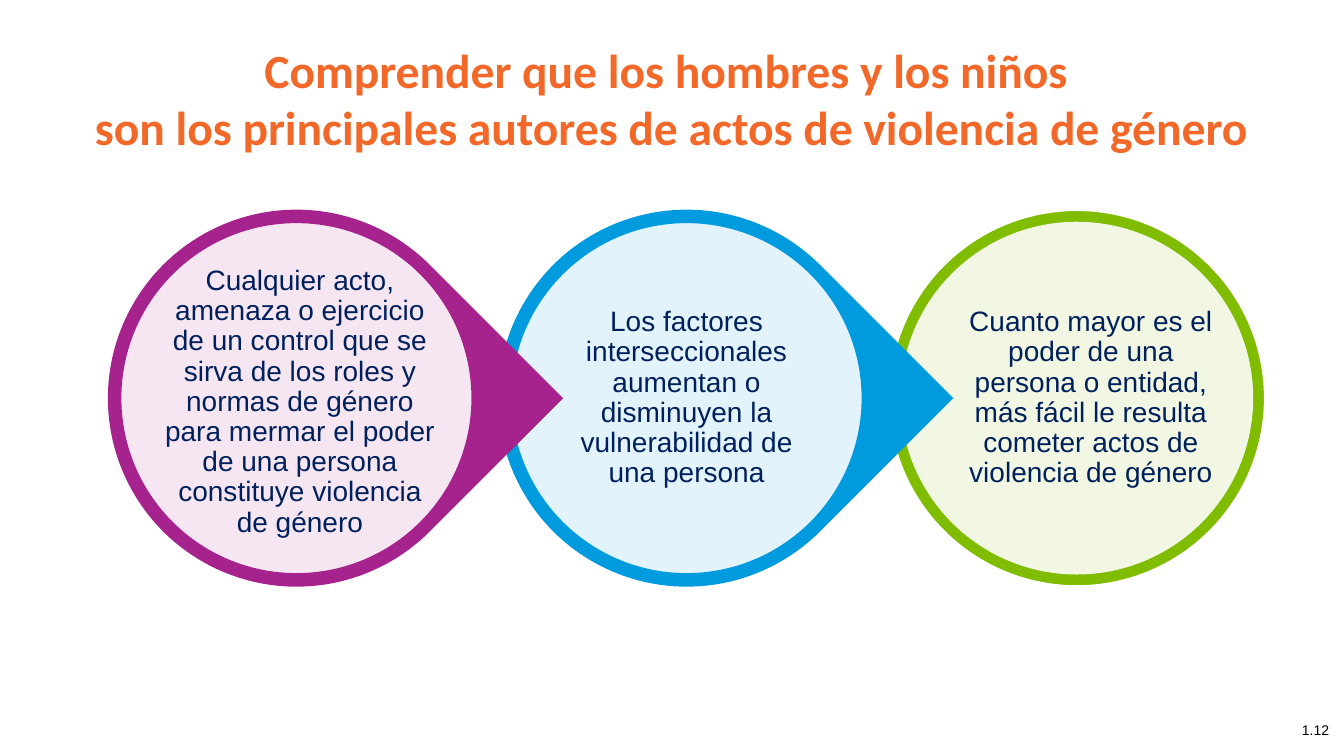
from lxml.etree import SubElement
from pptx import Presentation
from pptx.dml.color import RGBColor
from pptx.enum.shapes import MSO_SHAPE
from pptx.enum.text import MSO_ANCHOR, PP_ALIGN
from pptx.oxml.ns import qn
from pptx.util import Inches, Pt

NAVY, ORANGE, WHITE, BLACK = "00205C", "F26829", "FFFFFF", "000000"
STEP = 3.87

STAGES = [
    {"color": "A6228C", "outline": MSO_SHAPE.TEAR, "text_box": (1.58, 2.74, 2.79, 2.5),
     "text": "Cualquier acto, amenaza o ejercicio de un control que se sirva de los roles y normas "
             "de género para mermar el poder de una persona constituye violencia de género"},
    {"color": "009ADE", "outline": MSO_SHAPE.TEAR, "text_box": (5.56, 2.7, 2.5, 2.5),
     "text": "Los factores interseccionales aumentan o disminuyen la vulnerabilidad de una persona"},
    {"color": "80BC00", "outline": MSO_SHAPE.OVAL, "text_box": (9.57, 2.7, 2.5, 2.5),
     "text": "Cuanto mayor es el poder de una persona o entidad, más fácil le resulta cometer "
             "actos de violencia de género"},
]


def rgb(value):
    return RGBColor.from_string(value)


def set_attributes(target, values):
    for name, value in values.items():
        setattr(target, name, value)


class SlideBuilder:
    body = {"name": "Arial", "size": Pt(20)}
    title = {"name": "Calibri", "size": Pt(34), "bold": True}
    number = {"name": "Arial", "size": Pt(10)}

    def __init__(self, slide):
        self.slide = slide

    def shape(self, kind, box, fill, line=None, opacity=None, rotation=0):
        shape = self.slide.shapes.add_shape(kind, *map(Inches, box))
        shape.shadow.inherit = False
        shape.rotation = rotation
        shape.fill.solid()
        shape.fill.fore_color.rgb = rgb(fill)
        if opacity is not None:
            color = shape.fill._xPr.find(qn("a:solidFill"))[0]
            SubElement(color, qn("a:alpha"), val=str(opacity * 1000))
        if line:
            shape.line.color.rgb = rgb(line)
            shape.line.width = Pt(2)
        else:
            shape.line.fill.background()
        return shape

    def text(self, box, text, font, color, margins, paragraph_format, anchor=MSO_ANCHOR.TOP):
        frame = self.slide.shapes.add_textbox(*map(Inches, box)).text_frame
        horizontal, vertical = map(Inches, margins)
        set_attributes(frame, {
            "word_wrap": True, "vertical_anchor": anchor,
            "margin_left": horizontal, "margin_right": horizontal,
            "margin_top": vertical, "margin_bottom": vertical,
        })
        paragraph = frame.paragraphs[0]
        paragraph.text = text
        set_attributes(paragraph, paragraph_format)
        for run in paragraph.runs:
            set_attributes(run.font, font)
            run.font.color.rgb = rgb(color)

    def stage(self, index, color, outline, text_box, text):
        left = 1.07 + STEP * index
        is_drop = outline == MSO_SHAPE.TEAR
        self.shape(outline, (left, 2.08, 3.74, 3.74), color,
                   line=None if is_drop else WHITE, rotation=45 if is_drop else 0)
        self.shape(MSO_SHAPE.OVAL, (left + 0.12, 2.2, 3.5, 3.5), WHITE,
                   line=color if is_drop else None, opacity=89)
        self.text(text_box, text, self.body, NAVY, (0.03, 0.03),
                  {"alignment": PP_ALIGN.CENTER, "line_spacing": 0.9}, MSO_ANCHOR.MIDDLE)


def main():
    presentation = Presentation()
    set_attributes(presentation, {"slide_width": Inches(13.33), "slide_height": Inches(7.5)})
    builder = SlideBuilder(presentation.slides.add_slide(presentation.slide_layouts[6]))

    for index, stage in reversed(list(enumerate(STAGES))):
        builder.stage(index, **stage)

    builder.text((0.45, 0.31, 12.42, 1.3),
                 "Comprender que los hombres y los niños \n"
                 "son los principales autores de actos de violencia de género",
                 builder.title, ORANGE, (0.1, 0.1), {"alignment": PP_ALIGN.CENTER})
    builder.text((12.71, 6.94, 0.57, 0.39), "1.12", builder.number, BLACK, (0.1, 0.05),
                 {"alignment": PP_ALIGN.RIGHT, "line_spacing": 2.0})

    presentation.save("out.pptx")


if __name__ == "__main__":
    main()
